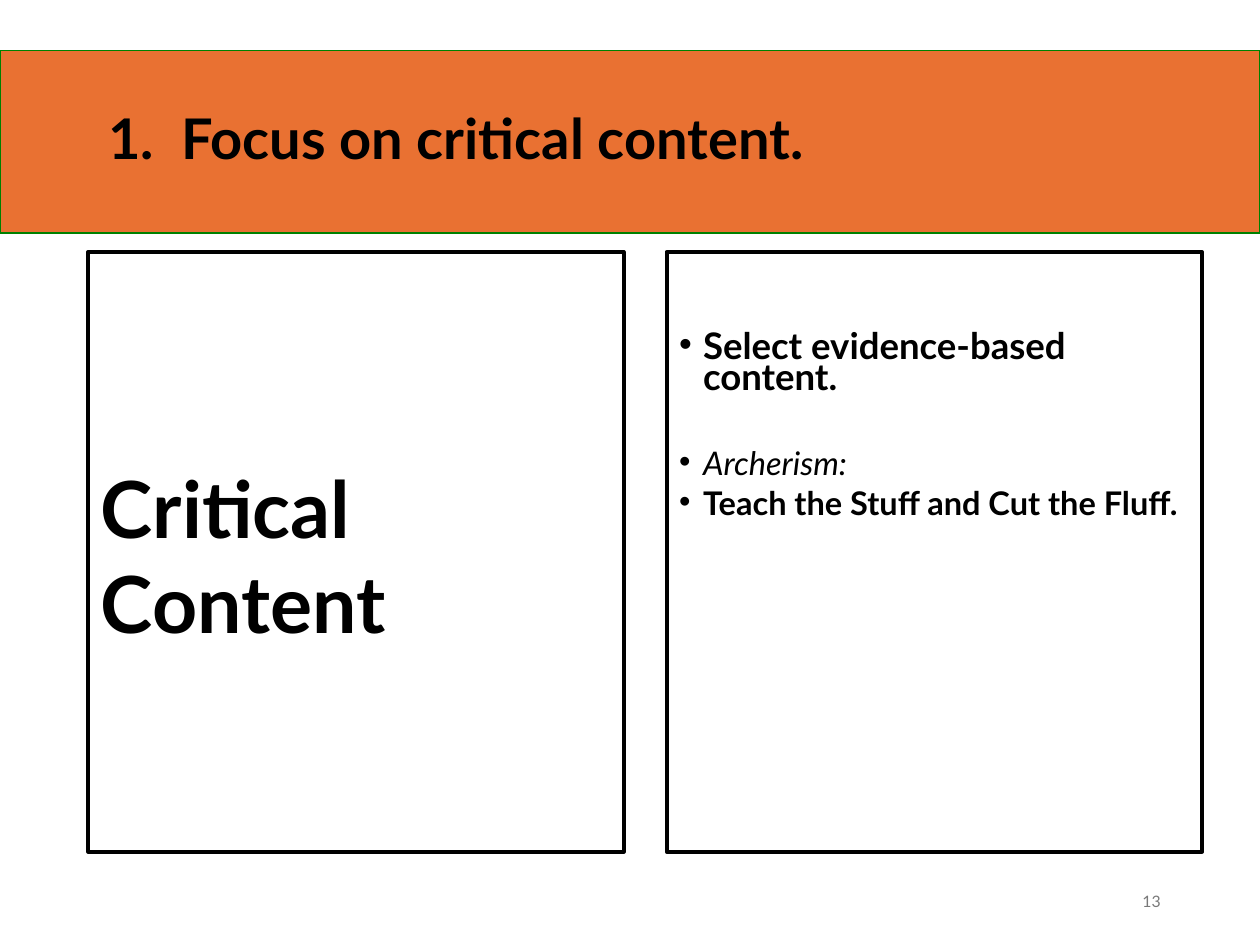
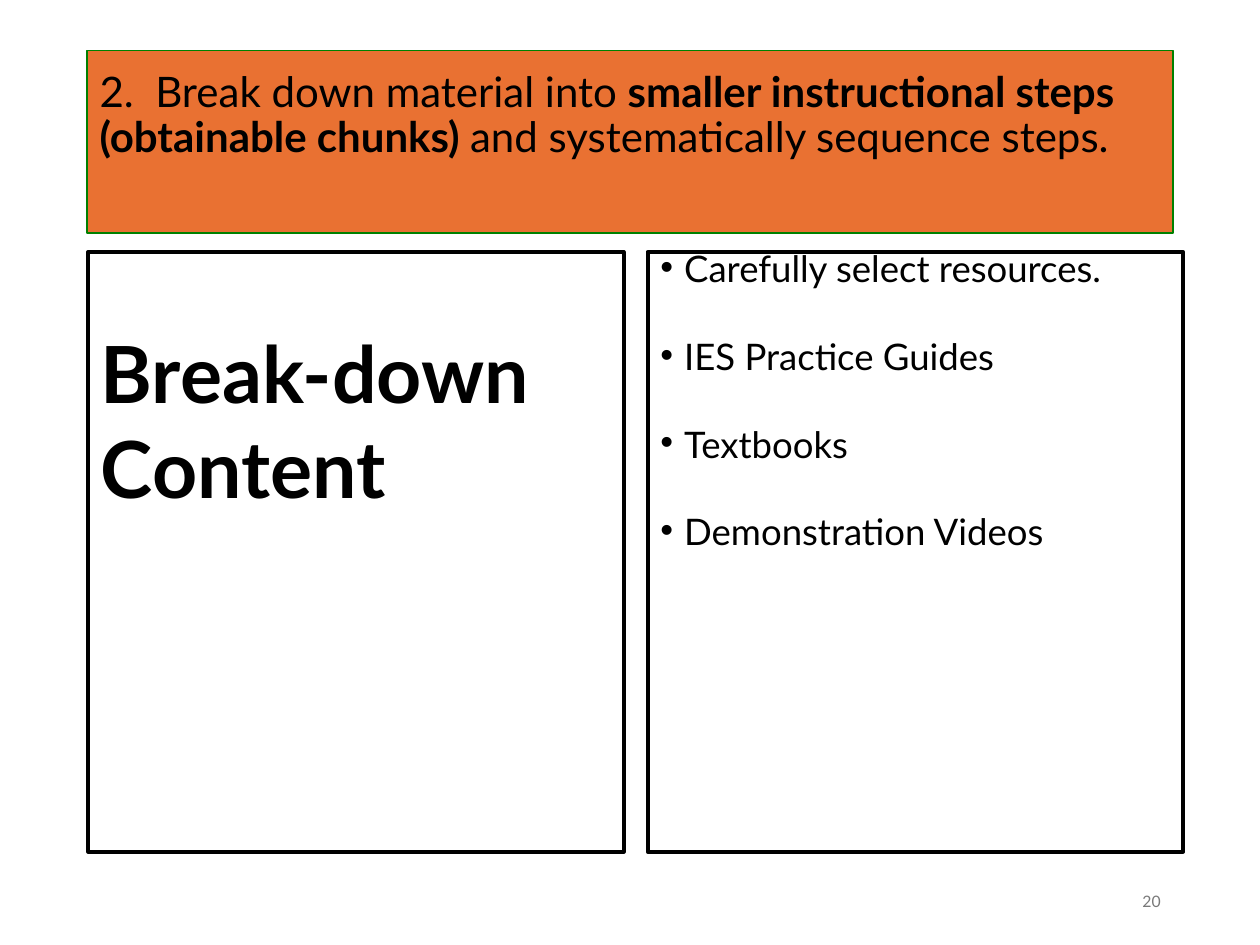
from lxml import etree
from pptx import Presentation
from pptx import util as u
from pptx.dml import color
from pptx.enum import text
from pptx.oxml import ns

COLORS = {"band": "E97132", "edge": "008000", "ink": "000000", "number": "797979"}
FONT = "Lato"
WIDTH, HEIGHT = 10, 7.5
PANEL_TOP, PANEL_WIDTH, PANEL_HEIGHT = 2, 4.25, 4.76
LEFT_COLUMN = 0.07 * WIDTH
BULLET_INDENT = u.Inches(0.19)

PAGES = [
    {
        "number": "13",
        "band": (0, WIDTH), "title_size": 32, "title_left": 0.86, "title_bottom": 0.05,
        "title": [("1.  Focus on critical content.", True)],
        "heading": "Critical Content", "heading_top": 1.65,
        "list_left": 5.29, "list_top": 0.66,
        "items": [
            ("Select evidence-based content.", 20.9, True, False, 0),
            ("Archerism:", 18.6, False, True, 32.5),
            ("Teach the Stuff and Cut the Fluff.", 18.6, True, False, 7.5),
        ],
    },
    {
        "number": "20",
        "band": (0.69, 8.62), "title_size": 24, "title_left": 0.1, "title_bottom": 0.45,
        "title": [
            ("2.  Break down material into ", False),
            ("smaller instructional steps (obtainable chunks) ", True),
            ("and systematically sequence steps.", False),
        ],
        "heading": "Break-down Content", "heading_top": 0.58,
        "list_left": 5.14, "list_top": 0.05,
        "items": [
            (item, 20.9, False, False, 32.5 if row else 0)
            for row, item in enumerate([
                "Carefully select resources.",
                "IES Practice Guides",
                "Textbooks",
                "Demonstration Videos",
            ])
        ],
    },
]


def place(box, left, top, width, height, edge=None, weight=0, margin_top=0.05):
    box.left, box.top, box.width, box.height = map(u.Inches, (left, top, width, height))
    frame = box.text_frame
    frame.word_wrap = True
    frame.auto_size = text.MSO_AUTO_SIZE.NONE
    frame.margin_top = u.Inches(margin_top)
    if edge:
        box.line.color.rgb = color.RGBColor.from_string(COLORS[edge])
        box.line.width = u.Pt(weight)
    return frame


def style(para, size, bold=None, italic=False, ink="ink", spacing=1.0, before=0, bullet=False):
    para.alignment = text.PP_ALIGN.LEFT
    para.line_spacing = spacing
    para.space_before = u.Pt(before)
    para.font.name = FONT
    para.font.size = u.Pt(size)
    para.font.bold = bold
    para.font.italic = italic
    para.font.color.rgb = color.RGBColor.from_string(COLORS[ink])
    settings = para._p.get_or_add_pPr()
    settings.set("marL", str(BULLET_INDENT if bullet else 0))
    settings.set("indent", str(-BULLET_INDENT if bullet else 0))
    mark = etree.Element(ns.qn("a:buChar" if bullet else "a:buNone"))
    if bullet:
        mark.set("char", "•")
    settings.find(ns.qn("a:defRPr")).addprevious(mark)


deck = Presentation()
deck.slide_width, deck.slide_height = u.Inches(WIDTH), u.Inches(HEIGHT)

for content in PAGES:
    page = deck.slides.add_slide(deck.slide_layouts[3])
    title, heading, points = page.placeholders

    band_left, band_width = content["band"]
    frame = place(title, band_left, 0.4, band_width, 1.45, "edge", 0.75)
    title.fill.solid()
    title.fill.fore_color.rgb = color.RGBColor.from_string(COLORS["band"])
    frame.vertical_anchor = text.MSO_ANCHOR.MIDDLE
    frame.margin_left = u.Inches(content["title_left"])
    frame.margin_bottom = u.Inches(content["title_bottom"])
    para = frame.paragraphs[0]
    for words, bold in content["title"]:
        span = para.add_run()
        span.text = words
        span.font.bold = bold
    style(para, content["title_size"], spacing=0.9)

    frame = place(heading, LEFT_COLUMN, PANEL_TOP, PANEL_WIDTH, PANEL_HEIGHT,
                  "ink", 2.25, content["heading_top"])
    frame.text = content["heading"]
    style(frame.paragraphs[0], 45, bold=True)

    frame = place(points, content["list_left"], PANEL_TOP, PANEL_WIDTH, PANEL_HEIGHT,
                  "ink", 2.25, content["list_top"])
    frame.text = "\n".join(item[0] for item in content["items"])
    for para, (_, size, bold, italic, before) in zip(frame.paragraphs, content["items"]):
        style(para, size, bold, italic, spacing=0.7, before=before, bullet=True)

    number = page.shapes.add_textbox(0, 0, 0, 0)
    frame = place(number, 7.06, 6.95, 2.25, 0.4)
    frame.vertical_anchor = text.MSO_ANCHOR.MIDDLE
    frame.text = content["number"]
    style(frame.paragraphs[0], 9, ink="number")
    frame.paragraphs[0].alignment = text.PP_ALIGN.RIGHT

deck.save("out.pptx")
